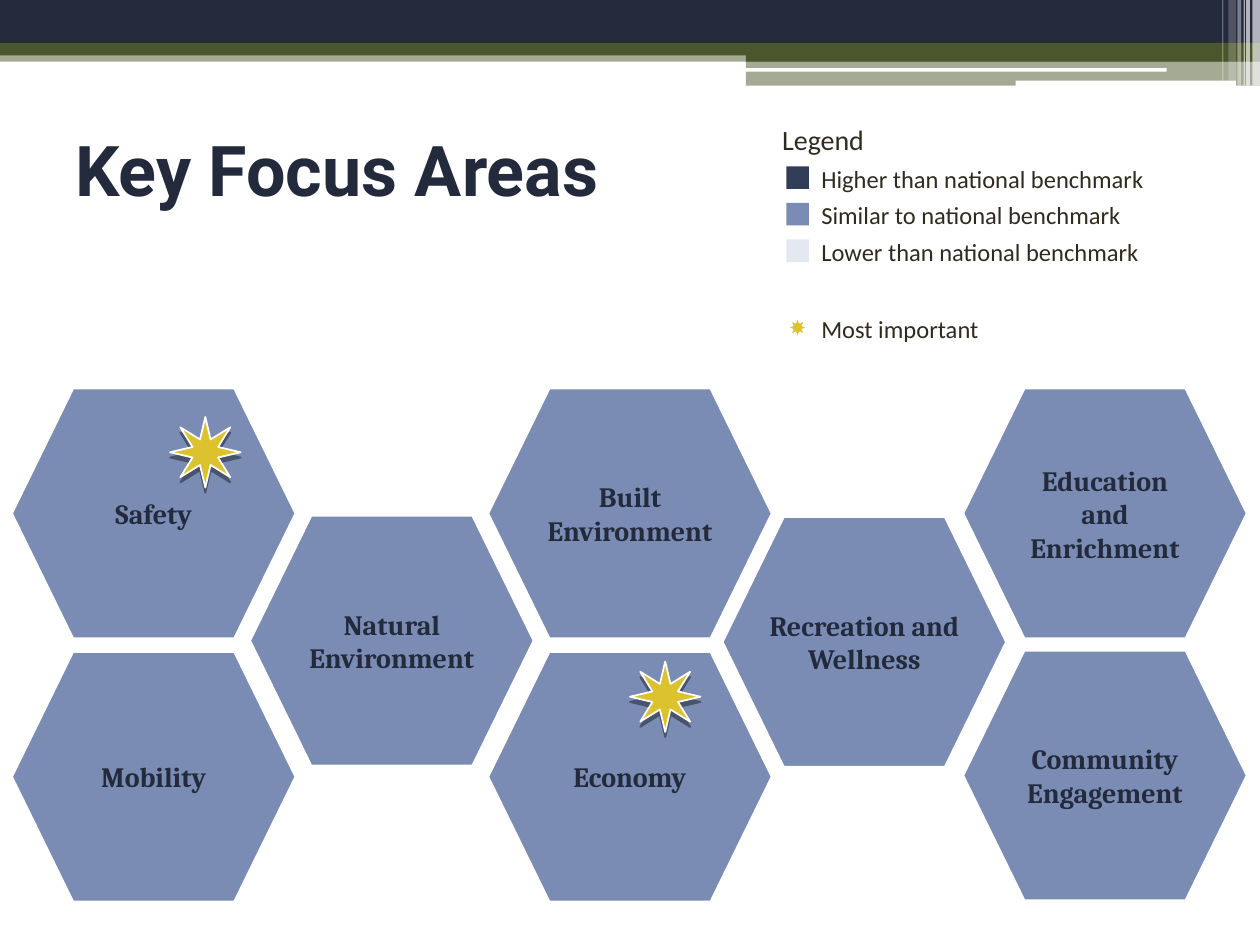
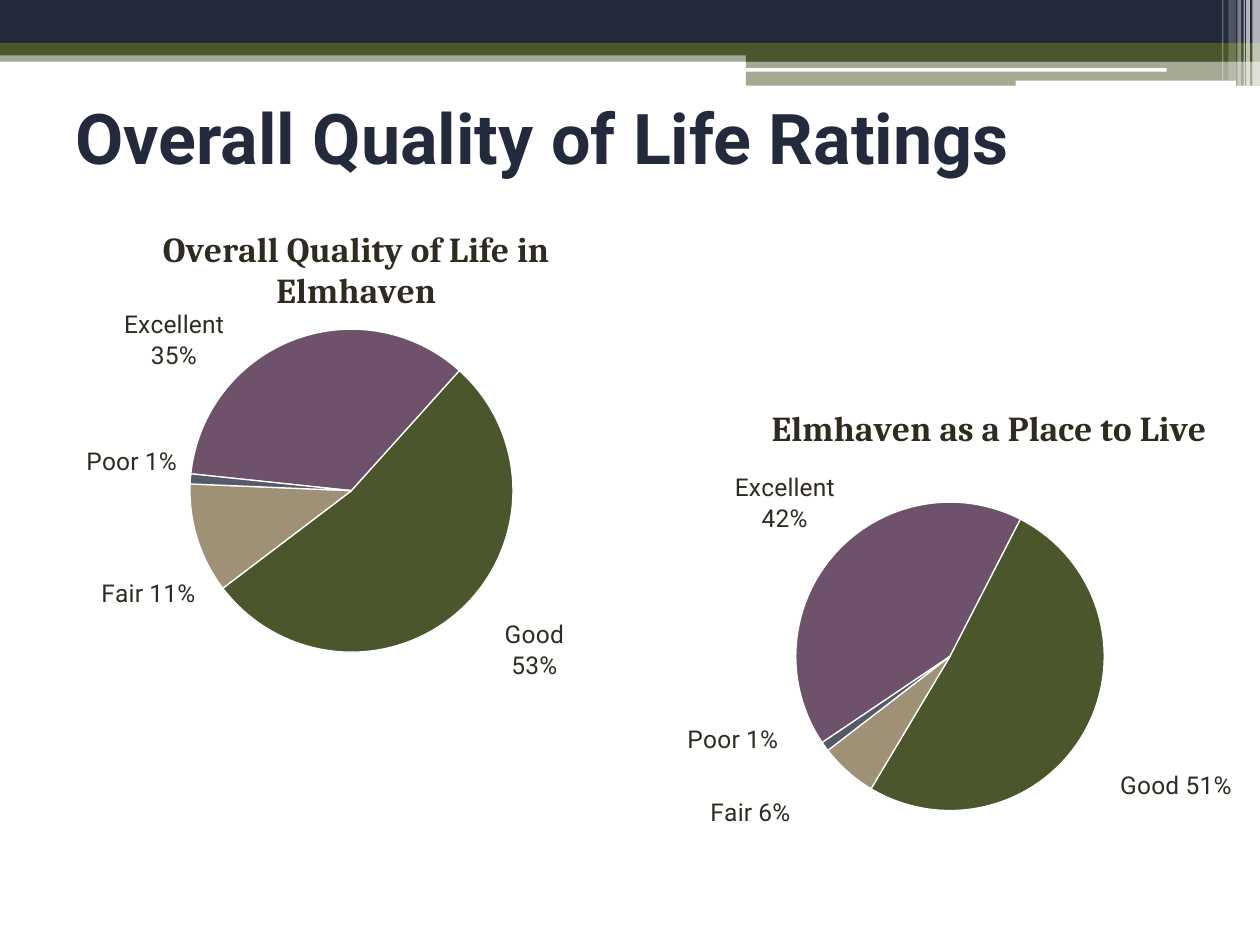
import copy
import lxml.etree
import pptx
import pptx.chart.data
import pptx.dml.color
import pptx.enum.chart
import pptx.enum.shapes
import pptx.enum.text
import pptx.oxml.ns
import pptx.util

Inches = pptx.util.Inches
Pt = pptx.util.Pt
RGBColor = pptx.dml.color.RGBColor
Kind = pptx.enum.shapes.MSO_SHAPE
Align = pptx.enum.text.PP_ALIGN
Anchor = pptx.enum.text.MSO_ANCHOR
qn = pptx.oxml.ns.qn
add = lxml.etree.SubElement

NAVY = RGBColor(0x22, 0x2A, 0x3C)
OLIVE = RGBColor(0x4C, 0x56, 0x2C)
WHITE = RGBColor(0xFF, 0xFF, 0xFF)
INK = RGBColor(0x2F, 0x2B, 0x20)
HIGH = RGBColor(0x31, 0x3D, 0x57)
BLUE = RGBColor(0x7A, 0x8C, 0xB4)
PALE = RGBColor(0xE4, 0xE8, 0xF0)
GOLD = RGBColor(0xDC, 0xC2, 0x2E)
PLUM = RGBColor(0x6E, 0x52, 0x6B)
TAN = RGBColor(0x9F, 0x91, 0x76)
SLATE = RGBColor(0x55, 0x5A, 0x6A)


def draw(slide, kind, box, color, alpha=100, edge=0):
    shape = slide.shapes.add_shape(kind, *map(Inches, box))
    shape.shadow.inherit = False
    shape.fill.solid()
    shape.fill.fore_color.rgb = color
    if alpha < 100:
        tint = shape._element.spPr.find(".//" + qn("a:srgbClr"))
        add(tint, qn("a:alpha"), val=str(alpha * 1000))
    if edge:
        shape.line.color.rgb = WHITE
        shape.line.width = Pt(edge)
    else:
        shape.line.fill.background()
    return shape


def write(shape, words, size, font, color, bold=False, align=Align.LEFT, after=0):
    frame = shape.text_frame
    frame.word_wrap = True
    frame.text = words
    para = frame.paragraphs[0]
    para.alignment = align
    para.space_after = Pt(after)
    para.font.size = Pt(size)
    para.font.name = font
    para.font.color.rgb = color
    para.font.bold = bold
    return frame


deck = pptx.Presentation()
deck.slide_width, deck.slide_height = Inches(10), Inches(7.5)

# Shared bands: left, top, width, height, colour, opacity
bands = [
    (0, 0.4, 10, 0.09, OLIVE, 50),
    (0, 0, 10, 0.34, NAVY, 100),
    (0, 0.34, 10, 0.1, OLIVE, 100),
    (5.92, 0.39, 4.08, 0.1, OLIVE, 100),
    (5.92, 0.48, 4.08, 0.2, OLIVE, 50),
    (5.91, 0.54, 3.35, 0.03, WHITE, 100),
    (8.06, 0.64, 1.75, 0.05, WHITE, 100),
    (9.94, 0, 0.06, 0.68, WHITE, 65),
    (9.89, 0, 0.03, 0.68, WHITE, 65),
    (9.87, 0, 0.01, 0.68, WHITE, 60),
    (9.82, 0, 0.03, 0.68, WHITE, 40),
    (9.75, 0, 0.06, 0.64, WHITE, 20),
    (9.7, 0, 0.01, 0.64, WHITE, 30),
]
heads = [("Key Focus Areas", 0.92, 0.83), ("Overall Quality of Life Ratings", 0.58, 1)]

# Both slides with bands and title
for words, top, height in heads:
    slide = deck.slides.add_slide(deck.slide_layouts[6])
    for *box, color, alpha in bands:
        draw(slide, Kind.RECTANGLE, box, color, alpha)
    title = slide.shapes.add_textbox(Inches(0.5), Inches(top), Inches(9), Inches(height))
    frame = write(title, words, 40, "Roboto", NAVY, True)
    frame.vertical_anchor = Anchor.MIDDLE
focus, life = deck.slides

# Legend
box = focus.shapes.add_textbox(Inches(6.11), Inches(0.92), Inches(1.2), Inches(0.33))
write(box, "Legend", 16, "Calibri", INK, after=10)
keys = [
    ("Higher than national benchmark", 1.32, Kind.RECTANGLE, HIGH, 0),
    ("Similar to national benchmark", 1.61, Kind.RECTANGLE, BLUE, 0),
    ("Lower than national benchmark", 1.9, Kind.RECTANGLE, PALE, 0),
    ("Most important", 2.51, Kind.STAR_8_POINT, GOLD, 1),
]
for words, top, kind, color, edge in keys:
    mark = draw(focus, kind, (6.24, top, 0.18, 0.18), color, edge=edge)
    if kind == Kind.STAR_8_POINT:
        mark.adjustments[0] = 0.235
    box = focus.shapes.add_textbox(Inches(6.42), Inches(top - 0.07), Inches(2.8), Inches(0.31))
    frame = write(box, words, 14, "Calibri", INK, after=10)
    frame.paragraphs[0].space_before = Pt(5)

# Hexagons: words, column, top, side margin
cols = [0.08, 1.97, 3.86, 5.72, 7.63]
areas = [
    ("Safety", 0, 3.07, 0),
    ("Mobility", 0, 5.16, 0),
    ("Natural Environment", 1, 4.08, 0),
    ("Built Environment", 2, 3.07, 0),
    ("Economy", 2, 5.16, 0),
    ("Recreation and Wellness", 3, 4.09, 0),
    ("Education and Enrichment", 4, 3.07, 0.1),
    ("Community Engagement", 4, 5.15, 0),
]
for words, col, top, side in areas:
    hexagon = draw(focus, Kind.HEXAGON, (cols[col], top, 2.28, 2.01), BLUE, edge=3)
    hexagon.adjustments[0] = 0.245
    frame = write(hexagon, words, 16, "Cambria", NAVY, True, Align.CENTER, 10)
    frame.vertical_anchor = Anchor.MIDDLE
    frame.margin_left = frame.margin_right = Inches(side)

# Stars on the most important areas
for left, top in [(1.35, 3.31), (5, 5.25)]:
    star = draw(focus, Kind.STAR_8_POINT, (left, top, 0.56, 0.56), GOLD, edge=1)
    star.adjustments[0] = 0.196
    glow = star._element.spPr.find(qn("a:effectLst"))
    shade = add(glow, qn("a:outerShdw"), dist=str(Pt(3)), dir="5400000", rotWithShape="0")
    tint = add(shade, qn("a:srgbClr"), val="000000")
    add(tint, qn("a:alpha"), val="40000")

# Pies: title, place, start angle, values, title spot, label shifts
pies = [
    ("Overall Quality of Life in Elmhaven", (0.58, 1.75, 4.42, 4.29), 276,
     (0.35, 0.53, 0.11, 0.01), (0.15, 0),
     [(-0.12, 0.07), (0.07, 0.01), (0.01, 0.07), (-0.01, -0.03)]),
    ("Elmhaven as a Place to Live", (5.25, 3.17, 4.58, 4.08), 236,
     (0.42, 0.51, 0.06, 0.01), (0.18, 0),
     [(0.01, -0.03), (0.05, 0.07), (-0.09, 0.04), (-0.07, -0.05)]),
]
for words, box, start, vals, spot, shifts in pies:
    data = pptx.chart.data.CategoryChartData(number_format="0%")
    data.categories = ["Excellent", "Good", "Fair", "Poor"]
    data.add_series("Series 1", vals)
    chart = life.shapes.add_chart(
        pptx.enum.chart.XL_CHART_TYPE.PIE, *map(Inches, box), data).chart
    chart.has_legend = False
    chart.font.size = Pt(11)
    chart.font.name = "Cambria"
    chart.font.color.rgb = INK
    chart.has_title = True
    chart.chart_title.text_frame.text = words
    font = chart.chart_title.text_frame.paragraphs[0].font
    font.size, font.name, font.bold = Pt(20), "Cambria", True
    font.color.rgb = INK

    # Slices
    plot = chart.plots[0]
    plot.vary_by_categories = True
    series = plot.series[0]
    for i, color in enumerate([PLUM, OLIVE, TAN, SLATE]):
        form = series.points[i].format
        form.fill.solid()
        form.fill.fore_color.rgb = color
        form.line.color.rgb = WHITE
        form.line.width = Pt(0.75)
    pie = plot._element
    for node in pie.findall(qn("c:firstSliceAng")):
        pie.remove(node)
    add(pie, qn("c:firstSliceAng"), val=str(start))

    # Label style
    labels = series.data_labels
    labels.show_category_name = labels.show_value = True
    labels.show_percentage = False
    labels.number_format, labels.number_format_is_linked = "0%", False
    labels.position = pptx.enum.chart.XL_LABEL_POSITION.OUTSIDE_END
    labels.font.size, labels.font.name, labels.font.bold = Pt(14), "Roboto", False
    labels.font.color.rgb = INK
    group = labels._element
    for node in group.findall(qn("c:showLeaderLines")):
        group.remove(node)
    add(group, qn("c:separator")).text = " "
    parts = list(group)
    add(group, qn("c:showLeaderLines"), val="0")

    # Places of title, plot and labels
    name = chart.chart_title._element
    area = pie.getparent()
    for holder in (name, area):
        for node in holder.findall(qn("c:layout")):
            holder.remove(node)
    edge = [("xMode", "edge"), ("yMode", "edge")]
    jobs = [
        (name.find(qn("c:tx")).addnext, edge + list(zip("xy", spot))),
        (pie.addprevious,
         [("layoutTarget", "inner")] + edge + list(zip("xywh", (0.21, 0.2, 0.58, 0.6)))),
    ]
    for i, shift in enumerate(shifts):
        label = lxml.etree.Element(qn("c:dLbl"))
        index = add(label, qn("c:idx"), val=str(i))
        label.extend(copy.deepcopy(parts))
        group.insert(i, label)
        jobs.append((index.addnext, list(zip("xy", shift))))
    for attach, items in jobs:
        layout = lxml.etree.Element(qn("c:layout"))
        manual = add(layout, qn("c:manualLayout"))
        for key, val in items:
            add(manual, qn("c:" + key), val=str(val))
        attach(layout)

deck.save("out.pptx")
